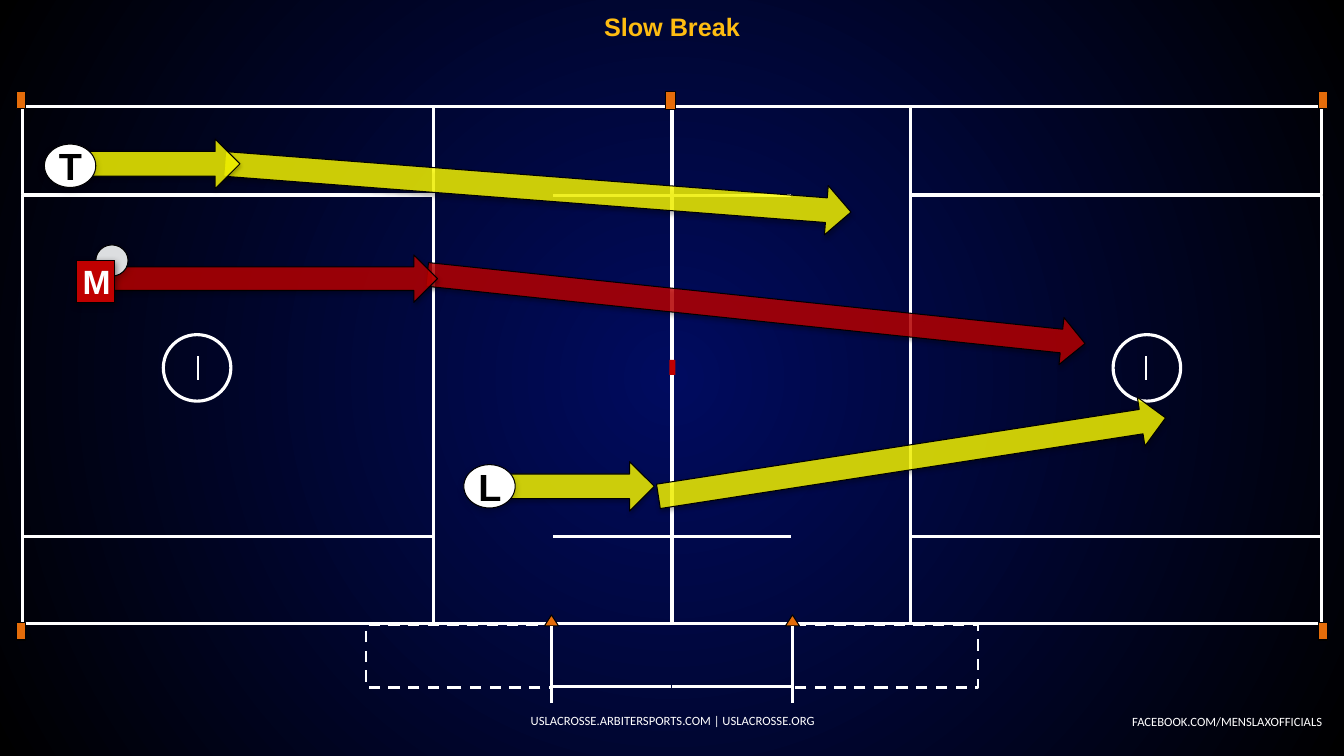
from pptx import Presentation
from pptx.dml.color import RGBColor
from pptx.enum.dml import MSO_LINE
from pptx.enum.shapes import MSO_CONNECTOR, MSO_SHAPE as SHAPE
from pptx.enum.text import MSO_ANCHOR as ANCHOR, PP_ALIGN as ALIGN
from pptx.oxml.ns import qn
from pptx.util import Pt
from lxml.etree import SubElement

PX = 9144  # one hundredth of an inch
WIDE, HIGH = 1333, 750
WHITE, BLACK, ORANGE, RED, YELLOW = "FFFFFF", "000000", "E46C0A", "C00000", "FFFF00"


def rgb(code):
    return RGBColor.from_string(code)


def emu(*px):
    return [n * PX for n in px]


def cast(shape, alpha, blur, dist):
    """Give a shape a soft shadow falling straight down."""
    glow = SubElement(shape._element.spPr.find(qn("a:effectLst")), qn("a:outerShdw"),
                      blurRad=str(Pt(blur)), dist=str(Pt(dist)),
                      dir="5400000", rotWithShape="0")
    ink = SubElement(glow, qn("a:srgbClr"), val=BLACK)
    SubElement(ink, qn("a:alpha"), val=str(alpha * 1000))


def paint(shape, fill=None, line=None, width=0.75):
    shape.shadow.inherit = False
    if fill:
        shape.fill.solid()
        shape.fill.fore_color.rgb = rgb(fill)
    else:
        shape.fill.background()
    if line:
        shape.line.color.rgb = rgb(line)
        shape.line.width = Pt(width)
    else:
        shape.line.fill.background()
    return shape


def draw(host, kind, box, fill=None, line=None, width=0.75):
    return paint(host.add_shape(kind, *emu(*box)), fill, line, width)


def write(shape, text, size, color, font="Arial", bold=False, align=ALIGN.CENTER):
    frame = shape.text_frame
    frame.text = text
    frame.vertical_anchor = ANCHOR.MIDDLE
    para = frame.paragraphs[0]
    para.alignment = align
    face = para.runs[0].font
    face.name, face.size, face.bold = font, Pt(size), bold
    face.color.rgb = rgb(color)


def stroke(host, x1, y1, x2, y2, width=2.25):
    line = host.add_connector(MSO_CONNECTOR.STRAIGHT, *emu(x1, y1, x2, y2))
    line.line.color.rgb = rgb(WHITE)
    line.line.width = Pt(width)
    SubElement(line._element.spPr, qn("a:effectLst"))


def half(host, right):
    """Draw one half of the field; the right half mirrors the left."""
    def flip(x, w=0):
        return WIDE - x - w if right else x

    def frame(x, y, w, h, kind=SHAPE.RECTANGLE, width=2.25):
        return draw(host, kind, (flip(x, w), y, w, h), None, WHITE, width)

    # Midfield and wing areas
    frame(430, 106, 237, 513)
    for y, h in ((106, 87), (532, 87), (194, 338)):
        frame(22, y, 408, h)
    # Corner pylons
    for y in (91, 618):
        draw(host, SHAPE.RECTANGLE, (flip(16, 9), y, 9, 17), ORANGE, BLACK)
    # Bench area and its cone
    frame(363, 620, 184, 62, width=2).line.dash_style = MSO_LINE.DASH
    tip = flip(547)
    cone = host.build_freeform(tip, 610, scale=PX)
    cone.add_line_segments([(tip + 7, 621), (tip - 7, 621)], close=True)
    paint(cone.convert_to_shape(), ORANGE, BLACK)
    # Crease and goal line
    frame(162, 332, 67, 66, SHAPE.OVAL)
    stroke(host, flip(196), 377, flip(196), 353, 1.5)
    # Substitution box and wing lines
    stroke(host, tip, 697, tip, 621)
    for y in (532, 194, 681):
        stroke(host, flip(666), y, flip(548), y)


def arrow(host, box, color, turn=0):
    run = draw(host, SHAPE.RIGHT_ARROW, box, color, BLACK)
    run.rotation = turn
    ink = run._element.spPr.find(qn("a:solidFill")).find(qn("a:srgbClr"))
    SubElement(ink, qn("a:alpha"), val="80000")
    cast(run, 35, 3.1, 1.8)


def badge(host, kind, box, fill, mark="", size=27, color=BLACK, pad=7, alpha=20):
    disc = draw(host, kind, box, fill, BLACK)
    cast(disc, alpha, 5, 2)
    if mark:
        body = disc.text_frame
        body.margin_left = body.margin_right = pad * PX
        body.margin_top = body.margin_bottom = pad * PX
        write(disc, mark, size, color, bold=True)


def note(host, box, text, align, wrap):
    label = host.add_textbox(*emu(*box))
    label.text_frame.word_wrap = wrap
    write(label, text, 9, WHITE, "Calibri", align=align)


def backdrop(slide):
    fill = slide.background.fill
    fill.gradient()
    for stop, color in zip(fill.gradient_stops, ("000B5F", BLACK)):
        stop.color.rgb = rgb(color)
    grad = next(slide._element.iter(qn("a:gradFill")))
    grad.remove(grad.find(qn("a:lin")))
    core = SubElement(grad, qn("a:path"), path="circle")
    SubElement(core, qn("a:fillToRect"), dict.fromkeys("ltrb", "50000"))


def main():
    deck = Presentation()
    deck.slide_width, deck.slide_height = emu(WIDE, HIGH)
    slide = deck.slides.add_slide(deck.slide_layouts[5])
    host = slide.shapes
    backdrop(slide)

    # Title
    title = host.title
    title.left, title.top, title.width, title.height = emu(0, 5, WIDE, 42)
    write(title, "Slow Break", 18, "FEBC11", bold=True)

    # Field
    for right in (False, True):
        half(host, right)
    draw(host, SHAPE.RECTANGLE, (660, 91, 10, 18), ORANGE, BLACK)
    draw(host, SHAPE.RECTANGLE, (664, 357, 6, 15), RED)

    # Footer
    note(host, (1109, 703, 212, 25), "FACEBOOK.COM/MENSLAXOFFICIALS", ALIGN.RIGHT, False)
    note(host, (456, 695, 422, 40), "USLACROSSE.ARBITERSPORTS.COM | USLACROSSE.ORG",
         ALIGN.CENTER, True)

    # Runs
    arrow(host, (222, 162, 623, 49), YELLOW, 4.4)
    arrow(host, (650, 429, 509, 49), YELLOW, 351.2)
    arrow(host, (422, 283, 656, 47), RED, 6)
    arrow(host, (100, 253, 334, 47), RED)
    arrow(host, (73, 138, 165, 49), YELLOW)
    arrow(host, (498, 458, 151, 49), YELLOW)

    # Officials, and the player with the ball
    badge(host, SHAPE.OVAL, (44, 143, 51, 43), WHITE, "T")
    badge(host, SHAPE.OVAL, (460, 461, 51, 43), WHITE, "L")
    player = host.add_group_shape().shapes
    badge(player, SHAPE.OVAL, (95, 243, 32, 31), "DCDEE0")
    badge(player, SHAPE.RECTANGLE, (76, 258, 38, 42), RED, "M", 24, WHITE, 6, 50)

    deck.save("out.pptx")


if __name__ == "__main__":
    main()
